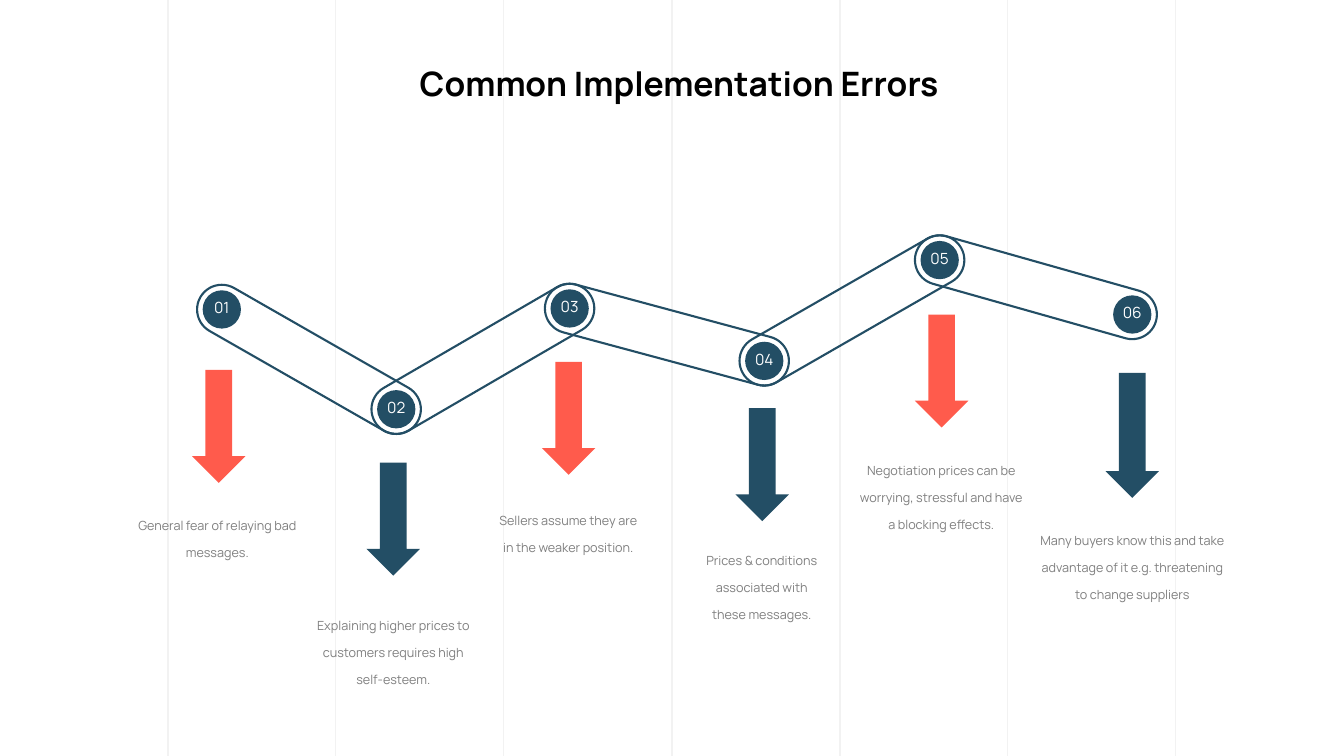
from dataclasses import dataclass
from itertools import pairwise
from math import atan2, degrees, hypot

from lxml.etree import SubElement
from pptx import Presentation
from pptx.dml.color import RGBColor
from pptx.enum.shapes import MSO_CONNECTOR as Connector, MSO_SHAPE as Shape
from pptx.enum.text import MSO_ANCHOR as Anchor, MSO_AUTO_SIZE as AutoSize, PP_ALIGN as Align
from pptx.oxml.ns import qn
from pptx.util import Inches, Pt


@dataclass(frozen=True)
class Theme:
    font: str = "Manrope"
    navy: str = "234E65"
    coral: str = "FF5B4C"
    grid: str = "F2F2F2"
    title: str = "000000"
    caption: str = "7F7F7F"
    number: str = "FFFFFF"
    title_size: int = 24
    number_size: int = 11
    caption_size: int = 9


@dataclass(frozen=True)
class Step:
    """One error: node centre, arrow (centre x, top, height), caption box and text."""
    node: tuple
    arrow: tuple
    caption_box: tuple
    caption: str


THEME = Theme()
WIDTH, HEIGHT = 13.33, 7.5
NODE_SIZE, LINK_THICKNESS, ARROW_WIDTH = 0.38, 0.49, 0.53
STEPS = [
    Step((2.2, 3.07), (2.17, 3.67, 1.12), (1.33, 5.02, 1.65, 0.43),
         "General fear of relaying bad messages."),
    Step((3.93, 4.06), (3.9, 4.59, 1.12), (3.14, 6.01, 1.52, 0.65),
         "Explaining higher prices to customers requires high self-esteem."),
    Step((5.65, 3.06), (5.64, 3.59, 1.12), (4.89, 4.97, 1.49, 0.43),
         "Sellers assume they are in the weaker position."),
    Step((7.58, 3.58), (7.56, 4.05, 1.12), (6.94, 5.37, 1.23, 0.65),
         "Prices & conditions associated with these messages."),
    Step((9.32, 2.58), (9.34, 3.12, 1.12), (8.51, 4.48, 1.65, 0.65),
         "Negotiation prices can be worrying, stressful and have a blocking effects."),
    Step((11.23, 3.12), (11.23, 3.7, 1.24), (10.26, 5.17, 1.94, 0.88),
         "Many buyers know this and take advantage of it e.g. threatening to change suppliers"),
]


def inches(*lengths):
    return [Inches(length) for length in lengths]


def write(holder, text, *, size, color, bold=False, spacing=1.0,
          anchor=Anchor.MIDDLE, fit=AutoSize.NONE):
    frame = holder.text_frame
    frame.margin_left = frame.margin_right = frame.margin_top = frame.margin_bottom = 0
    frame.word_wrap = True
    frame.auto_size = fit
    frame.vertical_anchor = anchor
    paragraph = frame.paragraphs[0]
    paragraph.alignment = Align.CENTER
    paragraph.line_spacing = spacing
    run = paragraph.add_run()
    run.text = text
    run.font.name = THEME.font
    run.font.size = Pt(size)
    run.font.bold = bold
    run.font.color.rgb = RGBColor.from_string(color)


def add_centered(slide, kind, center, size, fill=None, outline=None):
    """Place a preset shape by its centre, with a fill or an outline."""
    (x, y), (width, height) = center, size
    shape = slide.shapes.add_shape(
        kind, *inches(x - width / 2, y - height / 2, width, height))
    shape.shadow.inherit = False
    if fill:
        shape.fill.solid()
        shape.fill.fore_color.rgb = RGBColor.from_string(fill)
    else:
        shape.fill.background()
    if outline:
        shape.line.color.rgb = RGBColor.from_string(outline)
        shape.line.width = Pt(1.5)
    else:
        shape.line.fill.background()
    return shape


def add_grid(slide, columns=8):
    for column in range(1, columns):
        x = column * WIDTH / columns
        rule = slide.shapes.add_connector(Connector.STRAIGHT, *inches(x, 0, x, HEIGHT))
        rule.line.color.rgb = RGBColor.from_string(THEME.grid)
        rule.line.width = Pt(0.75)
        SubElement(rule.element.spPr, qn("a:effectLst"))


def add_title(slide, text, box):
    title = slide.shapes.title
    title.left, title.top, title.width, title.height = inches(*box)
    write(title, text, size=THEME.title_size, color=THEME.title, bold=True)
    # Bring the title in front of the grid
    title.element.getparent().append(title.element)


def add_link(slide, start, end):
    """Outline a capsule around two neighbouring nodes."""
    (x1, y1), (x2, y2) = start, end
    length = hypot(x2 - x1, y2 - y1) + LINK_THICKNESS
    capsule = add_centered(slide, Shape.ROUNDED_RECTANGLE, ((x1 + x2) / 2, (y1 + y2) / 2),
                           (length, LINK_THICKNESS), outline=THEME.navy)
    capsule.adjustments[0] = 0.5
    capsule.rotation = degrees(atan2(y2 - y1, x2 - x1))


def add_step(slide, number, step):
    x, top, height = step.arrow
    add_centered(slide, Shape.DOWN_ARROW, (x, top + height / 2), (ARROW_WIDTH, height),
                 fill=THEME.coral if number % 2 else THEME.navy)
    node = add_centered(slide, Shape.OVAL, step.node, (NODE_SIZE, NODE_SIZE), fill=THEME.navy)
    write(node, f"{number:02}", size=THEME.number_size, color=THEME.number, spacing=0.8)
    caption = slide.shapes.add_textbox(*inches(*step.caption_box))
    write(caption, step.caption, size=THEME.caption_size, color=THEME.caption,
          spacing=1.78, anchor=Anchor.TOP, fit=AutoSize.SHAPE_TO_FIT_TEXT)


def main():
    deck = Presentation()
    deck.slide_width, deck.slide_height = inches(WIDTH, HEIGHT)
    slide = deck.slides.add_slide(deck.slide_layouts[5])
    add_grid(slide)
    add_title(slide, "Common Implementation Errors", (3.82, 0.59, 5.83, 0.46))
    for step, following in pairwise(STEPS):
        add_link(slide, step.node, following.node)
    for number, step in enumerate(STEPS, start=1):
        add_step(slide, number, step)
    deck.save("out.pptx")


if __name__ == "__main__":
    main()
